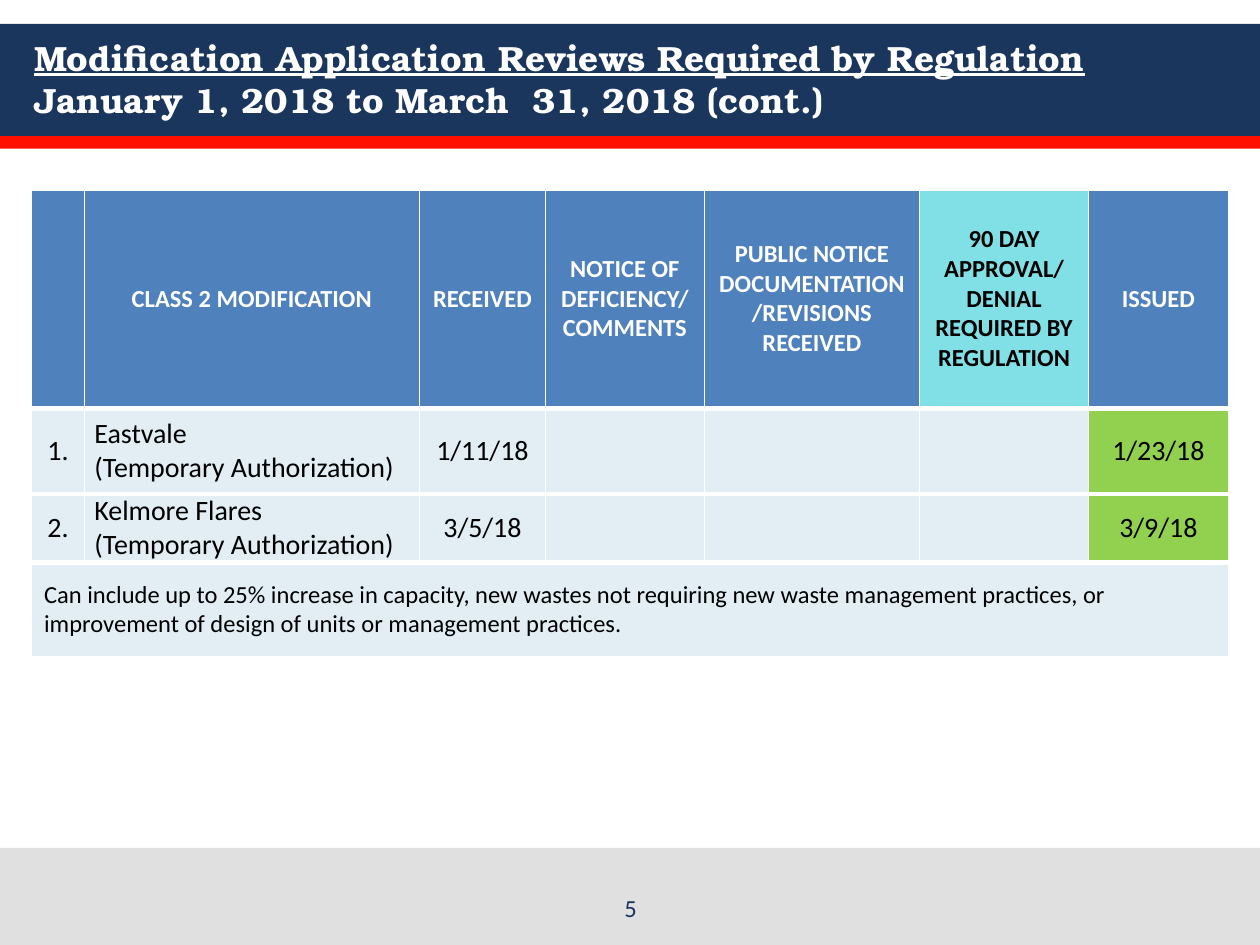
from lxml import etree
from pptx import Presentation
from pptx.dml.color import RGBColor
from pptx.enum.shapes import MSO_SHAPE
from pptx.enum.text import MSO_ANCHOR, PP_ALIGN
from pptx.oxml.ns import qn
from pptx.util import Inches, Pt

RECT = MSO_SHAPE.RECTANGLE
MIDDLE, BOTTOM = MSO_ANCHOR.MIDDLE, MSO_ANCHOR.BOTTOM
LEFT, CENTER = PP_ALIGN.LEFT, PP_ALIGN.CENTER

NAVY, WHITE, BLACK = "1B365D", "FFFFFF", "000000"
BLUE, AQUA, PALE, GREEN = "4F81BD", "81E0E5", "E2EDF4", "92D050"

TITLE = ("Modification Application Reviews Required by Regulation\v",
         "January 1, 2018 to March  31, 2018 (cont.)")
BANDS = [(0.19, 0.89, NAVY), (1.08, 0.1, "FF0F00"), (6.73, 0.77, "E0E0E0")]
HEADS = ["", "CLASS 2 MODIFICATION", "RECEIVED",
         "NOTICE OF DEFICIENCY/ COMMENTS",
         "PUBLIC NOTICE DOCUMENTATION/REVISIONS RECEIVED",
         "90 DAY APPROVAL/ DENIAL\nREQUIRED BY REGULATION", "ISSUED"]
ROWS = [
    ["1.", "Eastvale\n(Temporary Authorization)", "1/11/18", "", "", "", "1/23/18"],
    ["2.", "Kelmore Flares\n(Temporary Authorization)", "3/5/18", "", "", "", "3/9/18"],
]
NOTE = ("Can include up to 25% increase in capacity, new wastes not requiring "
        "new waste management practices, or\n"
        "improvement of design of units or management practices.")
WIDTHS = [0.42, 2.66, 1, 1.26, 1.71, 1.34, 1.11]
HEIGHTS = [1.74, 0.68, 0.46, 0.75]
NAME_COL, DUE_COL, DONE_COL = 1, 5, 6


def color(code):
    """Turn a hex string into a colour."""
    return RGBColor.from_string(code)


def style(font, size=14, face="Calibri", ink=BLACK, bold=False, under=False):
    """Format a font."""
    font.size, font.name = Pt(size), face
    font.bold, font.underline = bold, under
    font.color.rgb = color(ink)


def write(frame, text, align=CENTER, **look):
    """Fill a text frame, one paragraph per line."""
    frame.text = text
    for para in frame.paragraphs:
        para.alignment = align
        style(para.font, **look)
        for run in para.runs:
            style(run.font, **look)


def edge(cell, bottom=3):
    """Draw the white borders of a cell."""
    props = cell._tc.get_or_add_tcPr()
    sides = [("lnL", 1), ("lnR", 1), ("lnT", 3), ("lnB", bottom)]
    for spot, (tag, width) in enumerate(sides):
        line = etree.Element(qn("a:" + tag), w=str(Pt(width)))
        fill = etree.SubElement(line, qn("a:solidFill"))
        etree.SubElement(fill, qn("a:srgbClr"), val=WHITE)
        props.insert(spot, line)


def paint(cell, text, fill, pad=(0.08, 0), bottom=3, **look):
    """Set the text, fill, margins and borders of a cell."""
    cell.fill.solid()
    cell.fill.fore_color.rgb = color(fill)
    cell.vertical_anchor = MIDDLE
    cell.margin_left = cell.margin_right = Inches(pad[0])
    cell.margin_top = cell.margin_bottom = Inches(pad[1])
    write(cell.text_frame, text, **look)
    edge(cell, bottom)


def add_bands(slide):
    """Add the full-width colour bands."""
    for top, height, fill in BANDS:
        band = slide.shapes.add_shape(RECT, 0, Inches(top), Inches(10), Inches(height))
        band.shadow.inherit = False
        band.fill.solid()
        band.fill.fore_color.rgb = color(fill)
        band.line.fill.background()


def add_title(slide):
    """Place the title above the bands."""
    title = slide.shapes.title
    title.left, title.top = Inches(0.17), Inches(0.17)
    title.width, title.height = Inches(9.67), Inches(0.9)
    frame = title.text_frame
    frame.vertical_anchor = MIDDLE
    look = dict(size=20, face="TeX Gyre Bonum", ink=WHITE, bold=True)
    write(frame, TITLE[0], align=LEFT, under=True, **look)
    run = frame.paragraphs[0].add_run()
    run.text = TITLE[1]
    style(run.font, **look)
    slide.shapes._spTree.append(title._element)


def add_grid(slide):
    """Add the table of reviews."""
    grid = slide.shapes.add_table(len(HEIGHTS), len(WIDTHS), Inches(0.25), Inches(1.5),
                                  Inches(sum(WIDTHS)), Inches(sum(HEIGHTS))).table
    for col, width in zip(grid.columns, WIDTHS):
        col.width = Inches(width)
    for row, height in zip(grid.rows, HEIGHTS):
        row.height = Inches(height)
    for col, head in enumerate(HEADS):
        due = col == DUE_COL
        paint(grid.cell(0, col), head, AQUA if due else BLUE,
              ink=BLACK if due else WHITE, bold=True)
    for row, items in enumerate(ROWS, 1):
        for col, item in enumerate(items):
            paint(grid.cell(row, col), item, GREEN if col == DONE_COL else PALE,
                  align=LEFT if col == NAME_COL else CENTER, size=16)
    last = len(HEIGHTS) - 1
    note = grid.cell(last, 0)
    note.merge(grid.cell(last, len(WIDTHS) - 1))
    paint(note, NOTE, PALE, pad=(0.1, 0.05), bottom=1, align=LEFT)


def add_number(slide):
    """Add the page number."""
    box = slide.shapes.add_textbox(Inches(3.42), Inches(6.97), Inches(3.17), Inches(0.4))
    box.text_frame.word_wrap = True
    box.text_frame.vertical_anchor = BOTTOM
    write(box.text_frame, "5", ink=NAVY)


def main():
    """Build and save the slide."""
    deck = Presentation()
    deck.slide_width, deck.slide_height = Inches(10), Inches(7.5)
    slide = deck.slides.add_slide(deck.slide_layouts[5])
    add_bands(slide)
    add_title(slide)
    add_grid(slide)
    add_number(slide)
    deck.save("out.pptx")


if __name__ == "__main__":
    main()
